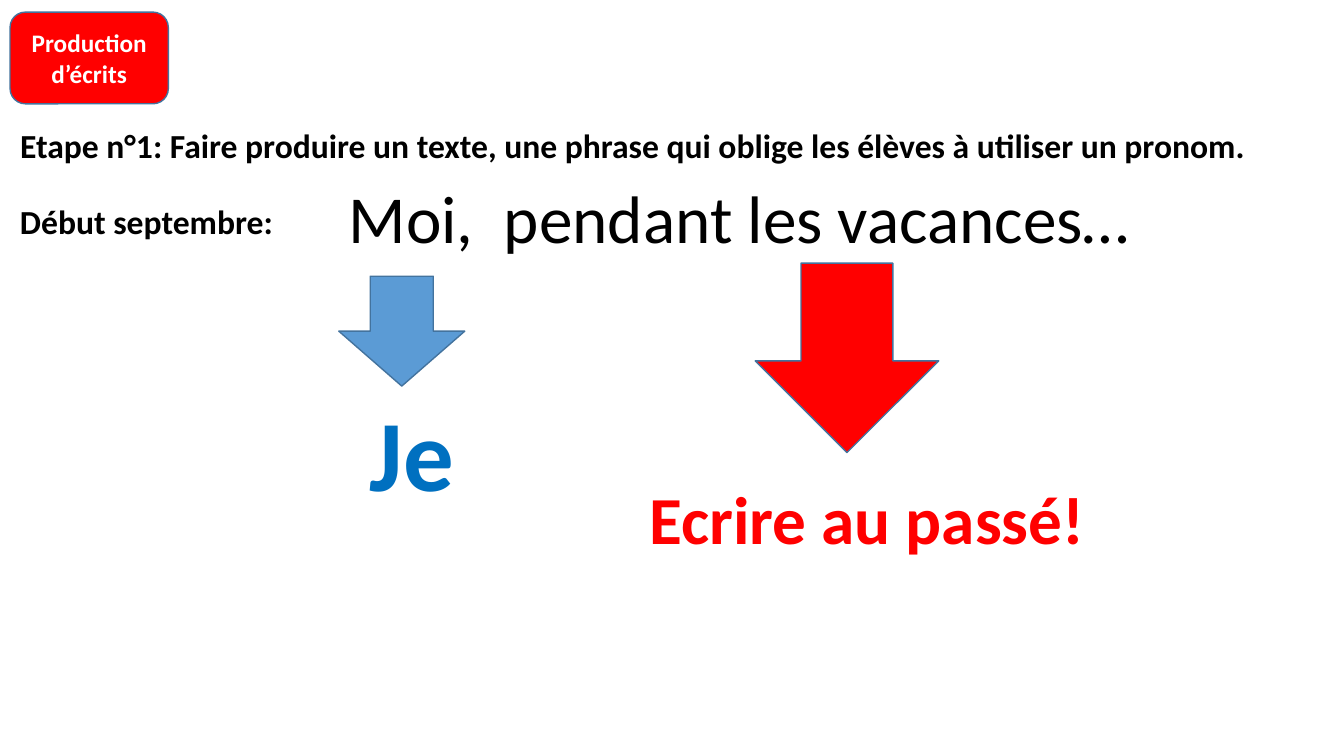
from pptx import Presentation
from pptx import util as u
from pptx.dml.color import RGBColor
from pptx.enum import shapes, text

WIDTH, HEIGHT = 13.33, 7.5
FONT = "Calibri"
BLACK = RGBColor(0x00, 0x00, 0x00)
WHITE = RGBColor(0xFF, 0xFF, 0xFF)
RED = RGBColor(0xFF, 0x00, 0x00)
BLUE = RGBColor(0x00, 0x70, 0xC0)
SKY = RGBColor(0x5B, 0x9B, 0xD5)
OUTLINE = RGBColor(0x43, 0x73, 0x9E)

MARGIN = 0.1      # left edge of the badge and both headings
PROMPT_LEFT = 3.36  # left edge of the prompt and the pronoun arrow

# wording, (left, top, width, height), size, colour, bold, wrap
STEP = ("Etape n°1: Faire produire un texte, une phrase qui oblige les élèves "
        "à utiliser un pronom.", (MARGIN, 1.19, 12.47, 0.5), 24, BLACK, True, False)
NOTES = [
    ("Début septembre:", (MARGIN, 1.94, 2.97, 0.5), 24, BLACK, True, True),
    ("Moi,  pendant les vacances…", (PROMPT_LEFT, 1.7, 8.03, 0.91), 48, BLACK, False, False),
    ("Je", (3.57, 3.83, 1.05, 1.31), 72, BLUE, True, False),
    ("Ecrire au passé!", (6.34, 4.69, 4.57, 0.91), 48, RED, True, False),
]
BADGE = ("Production d’écrits", (MARGIN, 0.12, 1.57, 0.91), 18, WHITE, True, True)
ARROWS = [
    ((PROMPT_LEFT, 2.74, 1.25, 1.09), SKY),
    ((7.49, 2.61, 1.82, 1.88), RED),
]


def inches(box):
    return [u.Inches(length) for length in box]


def write(shape, wording, size, colour, bold, wrap,
          align=text.PP_ALIGN.LEFT, anchor=text.MSO_ANCHOR.TOP):
    frame = shape.text_frame
    frame.word_wrap = wrap
    frame.auto_size = text.MSO_AUTO_SIZE.NONE
    frame.vertical_anchor = anchor
    paragraph = frame.paragraphs[0]
    paragraph.alignment = align
    run = paragraph.add_run()
    run.text = wording
    run.font.name = FONT
    run.font.size = u.Pt(size)
    run.font.bold = bold
    run.font.color.rgb = colour


def add_outlined(slide, preset, box, fill):
    shape = slide.shapes.add_shape(preset, *inches(box))
    shape.shadow.inherit = False
    shape.fill.solid()
    shape.fill.fore_color.rgb = fill
    shape.line.color.rgb = OUTLINE
    shape.line.width = u.Pt(1)
    return shape


def main():
    deck = Presentation()
    deck.slide_width, deck.slide_height = inches((WIDTH, HEIGHT))
    slide = deck.slides.add_slide(deck.slide_layouts.get_by_name("Title Only"))

    wording, box, *style = STEP
    step = slide.shapes.title
    step.left, step.top, step.width, step.height = inches(box)
    write(step, wording, *style)

    wording, box, *style = BADGE
    badge = add_outlined(slide, shapes.MSO_SHAPE.ROUNDED_RECTANGLE, box, RED)
    write(badge, wording, *style, align=text.PP_ALIGN.CENTER, anchor=text.MSO_ANCHOR.MIDDLE)

    for wording, box, *style in NOTES:
        write(slide.shapes.add_textbox(*inches(box)), wording, *style)
    for box, fill in ARROWS:
        add_outlined(slide, shapes.MSO_SHAPE.DOWN_ARROW, box, fill)

    deck.save("out.pptx")


if __name__ == "__main__":
    main()
